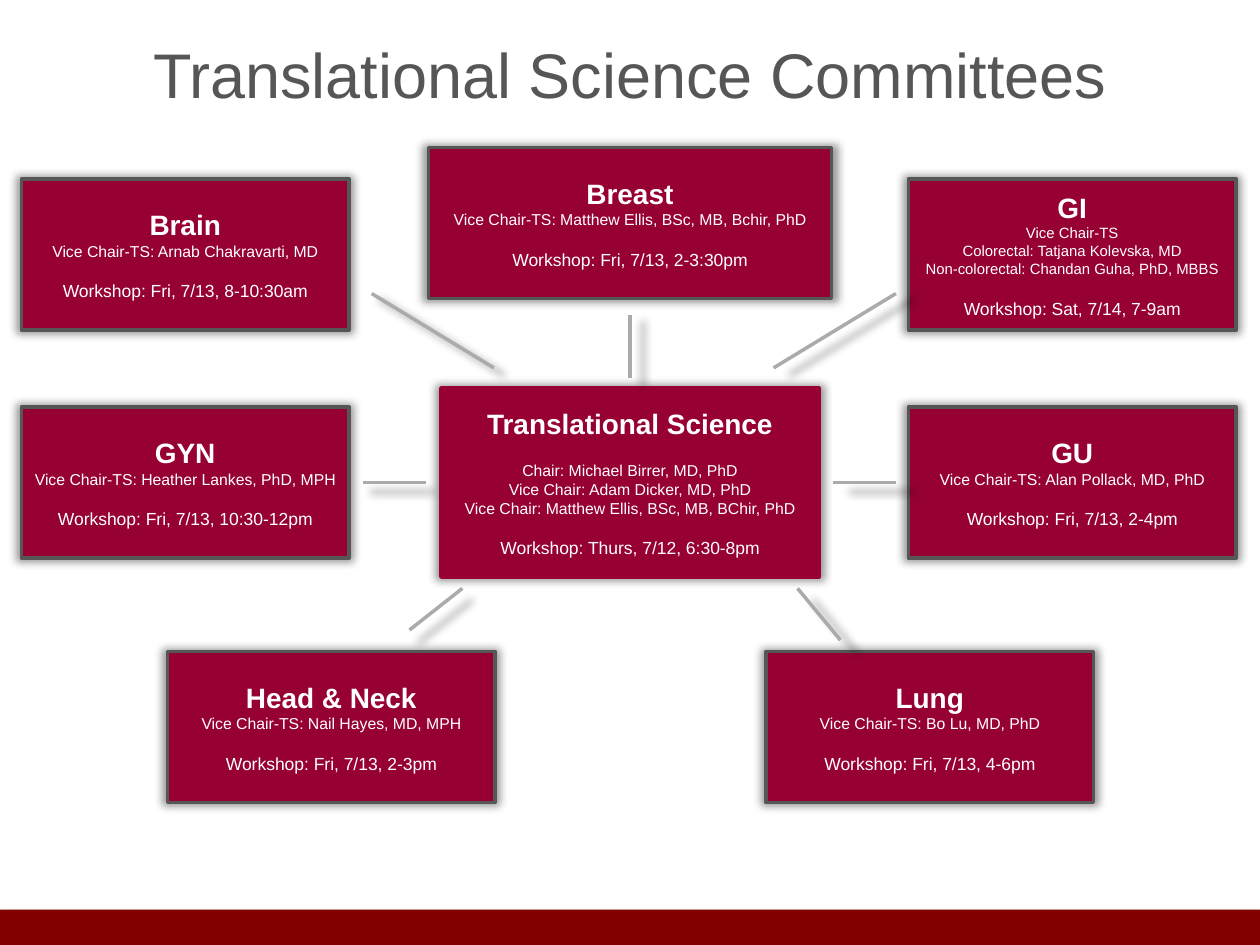
from lxml import etree
from pptx import Presentation
from pptx.dml.color import RGBColor
from pptx.enum.shapes import MSO_CONNECTOR as CONNECTOR, MSO_SHAPE as SHAPE
from pptx.enum.text import MSO_ANCHOR as ANCHOR, PP_ALIGN as ALIGN
from pptx.oxml import parse_xml
from pptx.oxml.ns import nsdecls
from pptx.util import Inches, Pt

WHITE = RGBColor(0xFF, 0xFF, 0xFF)
GREY = RGBColor(0x56, 0x56, 0x56)
LIGHT_GREY = RGBColor(0xAB, 0xAB, 0xAB)
CRIMSON = RGBColor(0x96, 0x00, 0x32)
CRIMSON_EDGE = RGBColor(0x99, 0x00, 0x33)
MAROON = RGBColor(0x80, 0x00, 0x00)


def add_shadow(s, alpha=40, blur=5, dist=0, scale=102):
    """Append an outer shadow; call after the fill and line are set."""
    s._element.spPr.append(parse_xml(
        f'<a:effectLst {nsdecls("a")}>'
        f'<a:outerShdw blurRad="{Pt(blur)}" dist="{Pt(dist)}" dir="5400000" '
        f'sx="{scale * 1000}" sy="{scale * 1000}" algn="ctr" rotWithShape="0">'
        f'<a:srgbClr val="000000"><a:alpha val="{alpha * 1000}"/></a:srgbClr>'
        '</a:outerShdw></a:effectLst>'))


def add_line(tf, text, size, color=WHITE, bold=False, before=0):
    p = tf.paragraphs[0] if not tf.text else tf.add_paragraph()
    p.text = text
    p.alignment = ALIGN.CENTER
    p.space_before = Pt(before)
    p.font.name = "Arial"
    p.font.size = Pt(size)
    p.font.bold = bold
    p.font.color.rgb = color


prs = Presentation()
prs.slide_width, prs.slide_height = Inches(10), Inches(7.5)
slide = prs.slides.add_slide(prs.slide_layouts[6])
shapes = slide.shapes

# Footer band
band = shapes.add_shape(SHAPE.RECTANGLE, 0, Inches(7.22), prs.slide_width, Inches(0.28))
band.fill.solid()
band.fill.fore_color.rgb = MAROON
band.line.fill.background()
add_shadow(band, alpha=35, blur=3.1, dist=1.8, scale=100)

# Title
title = shapes.add_textbox(Inches(0.5), Inches(0.13), Inches(9), Inches(0.9))
title.text_frame.word_wrap = True
title.text_frame.vertical_anchor = ANCHOR.MIDDLE
add_line(title.text_frame, "Translational Science Committees", 36, GREY)

# Committee boxes: columns and rows around the central one
LEFT, RIGHT, LOWER_LEFT, LOWER_RIGHT = 0.17, 7.21, 1.33, 6.08
TOP, MIDDLE, BOTTOM = 1.42, 3.23, 5.17
SIZE = (2.6, 1.2)
GAP = 11.5

committees = [
    ("Brain", (LEFT, TOP), SIZE,
     ["Vice Chair-TS: Arnab Chakravarti, MD"], "Fri, 7/13, 8-10:30am"),
    ("GYN", (LEFT, MIDDLE), SIZE,
     ["Vice Chair-TS: Heather Lankes, PhD, MPH"], "Fri, 7/13, 10:30-12pm"),
    ("Head & Neck", (LOWER_LEFT, BOTTOM), SIZE,
     ["Vice Chair-TS: Nail Hayes, MD, MPH"], "Fri, 7/13, 2-3pm"),
    ("Translational Science", (3.5, 3.08), (3, 1.5),
     ["Chair: Michael Birrer, MD, PhD", "Vice Chair: Adam Dicker, MD, PhD",
      "Vice Chair: Matthew Ellis, BSc, MB, BChir, PhD"], "Thurs, 7/12, 6:30-8pm"),
    ("Breast", (3.4, 1.17), (3.2, 1.2),
     ["Vice Chair-TS: Matthew Ellis, BSc, MB, Bchir, PhD"], "Fri, 7/13, 2-3:30pm"),
    ("GU", (RIGHT, MIDDLE), SIZE,
     ["Vice Chair-TS: Alan Pollack, MD, PhD"], "Fri, 7/13, 2-4pm"),
    ("Lung", (LOWER_RIGHT, BOTTOM), SIZE,
     ["Vice Chair-TS: Bo Lu, MD, PhD"], "Fri, 7/13, 4-6pm"),
    ("GI", (RIGHT, TOP), SIZE,
     ["Vice Chair-TS", "Colorectal: Tatjana Kolevska, MD",
      "Non-colorectal: Chandan Guha, PhD, MBBS"], "Sat, 7/14, 7-9am"),
]
for name, place, size, chairs, workshop in committees:
    central = name == "Translational Science"
    box = shapes.add_shape(SHAPE.RECTANGLE, *map(Inches, place + size))
    box.fill.solid()
    box.fill.fore_color.rgb = CRIMSON
    box.line.color.rgb = CRIMSON_EDGE if central else GREY
    box.line.width = Pt(2)
    add_shadow(box)
    tf = box.text_frame
    tf.word_wrap = True
    tf.vertical_anchor = ANCHOR.MIDDLE
    add_line(tf, name, 16, bold=True)
    for i, chair in enumerate(chairs):
        add_line(tf, chair, 8.5 if name == "GI" else 9,
                 before=GAP if central and i == 0 else 0)
    add_line(tf, f"Workshop: {workshop}", 10, before=GAP)

# Spokes between the central box and the others
spokes = [
    (3.67, 4.67, 3.25, 5), (2.88, 3.83, 3.38, 3.83), (6.61, 3.83, 7.11, 3.83),
    (6.33, 4.67, 6.67, 5.08), (6.14, 2.92, 7.11, 2.33), (2.95, 2.33, 3.92, 2.92),
    (5, 3, 5, 2.5),
]
for ends in spokes:
    spoke = shapes.add_connector(CONNECTOR.STRAIGHT, *map(Inches, ends))
    spoke.line.color.rgb = LIGHT_GREY
    spoke.line.width = Pt(2)
    add_shadow(spoke)

prs.save("out.pptx")
